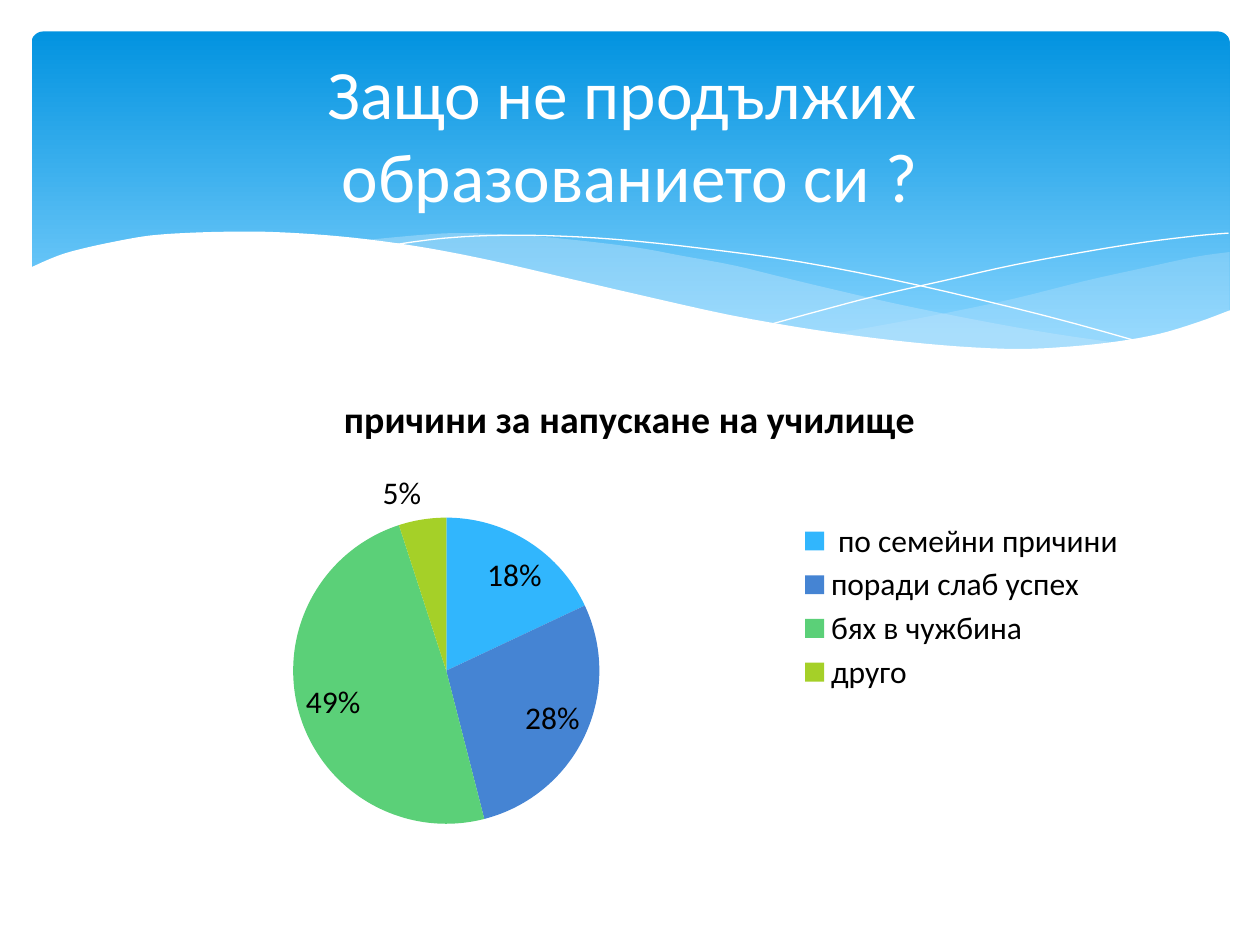
from lxml import etree
from pptx import Presentation
from pptx.chart.data import CategoryChartData
from pptx.dml.color import RGBColor
from pptx.enum.chart import XL_CHART_TYPE as ChartType
from pptx.enum.chart import XL_LABEL_POSITION as LabelPos
from pptx.enum.chart import XL_LEGEND_POSITION as LegendPos
from pptx.enum.shapes import MSO_SHAPE as Shape
from pptx.enum.text import MSO_ANCHOR, MSO_AUTO_SIZE, PP_ALIGN
from pptx.oxml.ns import qn
from pptx.util import Inches, Pt

WHITE = RGBColor(0xFF, 0xFF, 0xFF)
BLACK = RGBColor(0x00, 0x00, 0x00)
BAND_TOP = RGBColor(0x02, 0x93, 0xE0)
BAND_BOTTOM = RGBColor(0x83, 0xD3, 0xFE)
WAVE = RGBColor(0xC6, 0xE7, 0xFC)
SLICES = [
    RGBColor(0x31, 0xB6, 0xFD),
    RGBColor(0x45, 0x84, 0xD3),
    RGBColor(0x5B, 0xD0, 0x78),
    RGBColor(0xA5, 0xD0, 0x28),
]
FONT = "Calibri"

# Each wave outline is a list of smooth edges, joined by straight lines
RIGHT_WAVE = [
    [(9.76, 2), (9.48, 2.04), (9.06, 2.13), (8.61, 2.23), (8.05, 2.37),
     (7.53, 2.48), (7.06, 2.57), (6.61, 2.65)],
    [(6.61, 2.65), (7.05, 2.71), (7.45, 2.75), (7.81, 2.77), (8.14, 2.78),
     (8.54, 2.76), (8.89, 2.72), (9.21, 2.65), (9.49, 2.57), (9.76, 2.47)],
]
MIDDLE_WAVE = [
    [(8.93, 2.73), (8.37, 2.65), (7.75, 2.54), (7.06, 2.4), (6.29, 2.22),
     (5.84, 2.11), (5.41, 2.03), (5.02, 1.96), (4.42, 1.89), (3.99, 1.86),
     (3.61, 1.85), (3.28, 1.87), (2.86, 1.91)],
    [(2.86, 1.91), (3.42, 1.99), (4.04, 2.11), (4.49, 2.22), (5.3, 2.4),
     (6.01, 2.55), (6.65, 2.66), (7.22, 2.74), (7.73, 2.77), (8.18, 2.78),
     (8.57, 2.77), (8.93, 2.73)],
]
FALLING_LINE = [
    [(3.09, 1.95), (3.28, 1.92), (3.53, 1.89), (3.87, 1.87), (4.33, 1.87),
     (4.89, 1.9), (5.56, 1.97), (6.36, 2.08), (7.27, 2.26), (8.31, 2.51),
     (9.07, 2.72)],
]
RISING_LINE = [
    [(6.13, 2.57), (6.53, 2.46), (6.95, 2.35), (7.48, 2.23), (8.06, 2.1),
     (8.66, 1.99), (9.1, 1.92), (9.51, 1.87), (9.75, 1.85)],
]
WHITE_WAVE = [
    [(9.77, 2.46), (9.5, 2.56), (9.2, 2.65), (8.87, 2.71), (8.5, 2.75),
     (8.09, 2.77), (7.61, 2.75), (7.08, 2.7), (6.48, 2.62), (5.79, 2.5),
     (5.03, 2.33), (4.47, 2.2), (3.91, 2.07), (3.4, 1.97), (2.92, 1.9),
     (2.5, 1.86), (2.11, 1.84), (1.77, 1.84), (1.46, 1.85), (1.19, 1.87),
     (0.95, 1.91), (0.67, 1.97), (0.46, 2.03), (0.23, 2.13)],
    [(0.23, 3.29), (9.77, 3.29)],
]


def smooth(knots, steps=4):
    """Catmull-Rom curve through the knots, as a list of points."""
    ends = [knots[0]] + knots + [knots[-1]]
    points = [knots[0]]
    for a, b, c, d in zip(ends, ends[1:], ends[2:], ends[3:]):
        for i in range(1, steps + 1):
            t = i / steps
            points.append(tuple(
                (2 * q + (r - p) * t + (2 * p - 5 * q + 4 * r - s) * t ** 2
                 + (3 * q - p - 3 * r + s) * t ** 3) / 2
                for p, q, r, s in zip(a, b, c, d)))
    return points


def add_curve(slide, edges, fill=None, alpha=None, line=None):
    points = [(Inches(x), Inches(y)) for edge in edges for x, y in smooth(edge)]
    builder = slide.shapes.build_freeform(*points[0], scale=1.0)
    builder.add_line_segments(points[1:], close=fill is not None)
    sp = builder.convert_to_shape()
    sp.shadow.inherit = False
    if fill is None:
        sp.fill.background()
    else:
        sp.fill.solid()
        sp.fill.fore_color.rgb = fill
    if alpha is not None:
        color = sp.element.spPr.find(qn("a:solidFill"))[0]
        etree.SubElement(color, qn("a:alpha"), val=str(alpha * 1000))
    if line is None:
        sp.line.fill.background()
    else:
        sp.line.color.rgb = line
        sp.line.width = Pt(0)


def add_band(slide):
    sp = slide.shapes.add_shape(Shape.ROUNDED_RECTANGLE, Inches(0.25),
                                Inches(0.25), Inches(9.51), Inches(2.7))
    sp.adjustments[0] = 0.034
    sp.shadow.inherit = False
    sp.line.fill.background()
    sp.fill.gradient()
    sp.fill.gradient_angle = 270
    stops = zip(sp.fill.gradient_stops, (0, 0.9), (BAND_TOP, BAND_BOTTOM))
    for stop, position, color in stops:
        stop.position = position
        stop.color.rgb = color


def set_title(slide, text):
    title = slide.shapes.title
    title.left, title.top = Inches(0.5), Inches(0.37)
    title.width, title.height = Inches(9), Inches(1.37)
    tf = title.text_frame
    tf.text = text
    tf.auto_size = MSO_AUTO_SIZE.NONE
    tf.vertical_anchor = MSO_ANCHOR.MIDDLE
    p = tf.paragraphs[0]
    p.alignment = PP_ALIGN.CENTER
    for r in p.runs:
        r.font.name, r.font.size = FONT, Pt(39.6)
        r.font.color.rgb = WHITE
    # Bring the title in front of the band
    title.element.getparent().append(title.element)


def set_layout(parent, index, inner=False, **box):
    """Place a chart part by fractions of the chart area."""
    for old in parent.findall(qn("c:layout")):
        parent.remove(old)
    layout = etree.Element(qn("c:layout"))
    parent.insert(index, layout)
    manual = etree.SubElement(layout, qn("c:manualLayout"))
    if inner:
        etree.SubElement(manual, qn("c:layoutTarget"), val="inner")
    for mode in ("xMode", "yMode"):
        etree.SubElement(manual, qn(f"c:{mode}"), val="edge")
    for name, value in box.items():
        etree.SubElement(manual, qn(f"c:{name}"), val=str(value))


def add_pie(slide, title, values):
    data = CategoryChartData(number_format="0%")
    data.categories = list(values)
    data.add_series(title, list(values.values()))
    chart = slide.shapes.add_chart(ChartType.PIE, Inches(0.95), Inches(2.93),
                                   Inches(8.1), Inches(3.77), data).chart
    chart.font.name, chart.font.size = FONT, Pt(18)
    chart.font.color.rgb = BLACK

    chart.has_title = True
    chart.chart_title.text_frame.text = title
    font = chart.chart_title.text_frame.paragraphs[0].runs[0].font
    font.name, font.size, font.bold = FONT, Pt(21.6), True
    font.color.rgb = BLACK

    chart.has_legend = True
    chart.legend.position = LegendPos.RIGHT
    chart.legend.include_in_layout = False

    plot = chart.plots[0]
    plot.vary_by_categories = True
    plot.has_data_labels = True
    labels = plot.data_labels
    labels.show_value, labels.show_percentage = True, False
    labels.number_format, labels.number_format_is_linked = "0%", False
    labels.position = LabelPos.BEST_FIT
    for i, color in enumerate(SLICES):
        fill = plot.series[0].points[i].format.fill
        fill.solid()
        fill.fore_color.rgb = color

    area = chart.element.find(".//" + qn("c:plotArea"))
    set_layout(area, 0, inner=True, x=0.17, y=0.31, w=0.3, h=0.65)
    legend = chart.element.find(".//" + qn("c:legend"))
    set_layout(legend, 1, x=0.66, y=0.31, w=0.33, h=0.38)


def main():
    prs = Presentation()
    prs.slide_width, prs.slide_height = Inches(10), Inches(7.5)
    slide = prs.slides.add_slide(prs.slide_layouts[5])

    # Header band with waves
    add_band(slide)
    add_curve(slide, RIGHT_WAVE, fill=WAVE, alpha=29)
    add_curve(slide, MIDDLE_WAVE, fill=WAVE, alpha=40)
    add_curve(slide, FALLING_LINE, line=WHITE)
    add_curve(slide, RISING_LINE, line=WHITE)
    add_curve(slide, WHITE_WAVE, fill=WHITE)

    # Chart and title
    add_pie(slide, "причини за напускане на училище", {
        " по семейни причини": 0.18,
        "поради слаб успех": 0.28,
        "бях в чужбина": 0.49,
        "друго": 0.05,
    })
    set_title(slide, "Защо не продължих \vобразованието си ?")
    prs.save("out.pptx")


if __name__ == "__main__":
    main()
